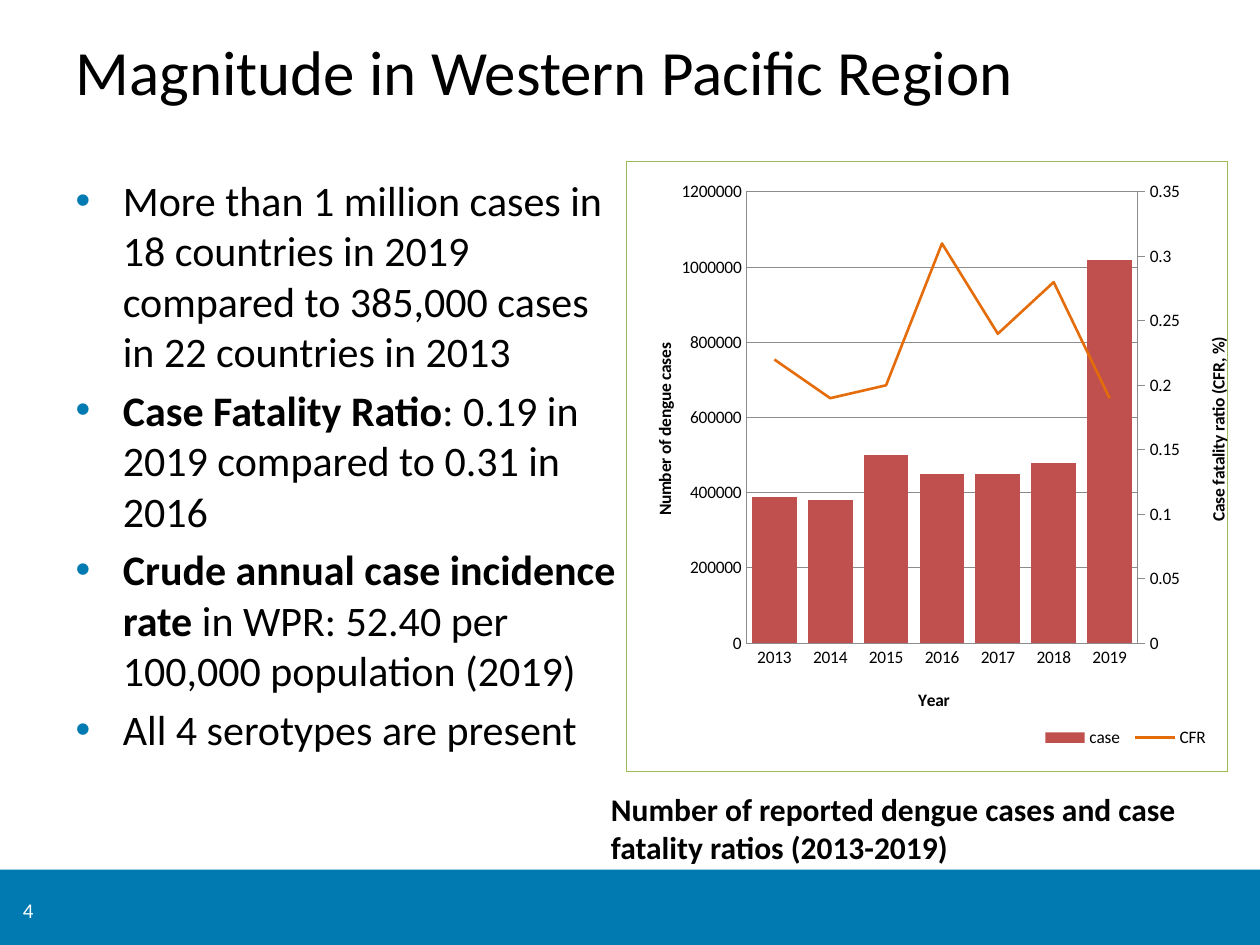
from copy import deepcopy
from dataclasses import dataclass

from pptx import Presentation
from pptx.chart.axis import CategoryAxis, ValueAxis
from pptx.chart.data import CategoryChartData
from pptx.dml.color import RGBColor
from pptx.enum.chart import XL_CHART_TYPE, XL_LEGEND_POSITION, XL_MARKER_STYLE, XL_TICK_MARK
from pptx.enum.shapes import MSO_SHAPE
from pptx.enum.text import MSO_ANCHOR, MSO_AUTO_SIZE, PP_ALIGN
from pptx.oxml import parse_xml
from pptx.oxml.ns import nsdecls, qn
from pptx.util import Pt


@dataclass(frozen=True)
class Theme:
    """Colours, font and type sizes of the slide."""
    font: str = "Calibri"
    ink: str = "000000"
    paper: str = "FFFFFF"
    accent: str = "007AB0"
    grid: str = "8C8C8C"
    frame: str = "9BBB59"
    cases: str = "C0504D"
    ratio: str = "E46C0A"
    title: int = 36
    body: int = 24
    caption: int = 18
    number: int = 12
    chart: int = 10


THEME = Theme()
BULLETS = [
    [("More than 1 million cases in 18 countries in 2019 compared to 385,000 cases "
      "in 22 countries in 2013", False)],
    [("Case Fatality Ratio", True), (": 0.19 in 2019 compared to 0.31 in 2016", False)],
    [("Crude annual case incidence rate ", True),
     ("in WPR: 52.40 per 100,000 population (2019)", False)],
    [("All 4 serotypes are present", False)],
]
YEARS = [str(year) for year in range(2013, 2020)]
CASES = [390000, 380000, 500000, 450000, 450000, 480000, 1020000]
RATIOS = [0.22, 0.19, 0.2, 0.31, 0.24, 0.28, 0.19]


def style_font(font, size, color=THEME.ink, bold=False):
    """Set the theme font with a size, colour and weight."""
    font.name, font.size, font.bold = THEME.font, Pt(size), bold
    font.color.rgb = RGBColor.from_string(color)


def style_line(line, color, width):
    """Set a solid line."""
    line.color.rgb = RGBColor.from_string(color)
    line.width = Pt(width)


def move(shape, box):
    """Place a shape in a box of left, top, width and height in points."""
    shape.left, shape.top, shape.width, shape.height = map(Pt, box)


def fill_frame(frame, text, size, color=THEME.ink, bold=False, anchor=MSO_ANCHOR.TOP):
    """Write one left-aligned paragraph into a wrapping text frame."""
    frame.word_wrap = True
    frame.auto_size = MSO_AUTO_SIZE.NONE
    frame.vertical_anchor = anchor
    para = frame.paragraphs[0]
    para.text = text
    para.alignment = PP_ALIGN.LEFT
    style_font(para.font, size, color, bold)


def add_title(page, box):
    """Fill the title placeholder."""
    title = page.shapes.title
    move(title, box)
    fill_frame(title.text_frame, "Magnitude in Western Pacific Region", THEME.title,
               anchor=MSO_ANCHOR.MIDDLE)


def add_bullets(page, box):
    """Fill the body placeholder with the bulleted list."""
    body = page.placeholders[1]
    move(body, box)
    frame = body.text_frame
    frame.word_wrap = True
    frame.auto_size = MSO_AUTO_SIZE.NONE
    for index, spans in enumerate(BULLETS):
        para = frame.add_paragraph() if index else frame.paragraphs[0]
        para.space_before = Pt(4.8 if index else 0)
        properties = para._p.get_or_add_pPr()
        properties.set("marL", str(Pt(27)))
        properties.set("indent", str(-Pt(27)))
        properties.append(parse_xml(
            f'<a:buClr {nsdecls("a")}><a:srgbClr val="{THEME.accent}"/></a:buClr>'))
        properties.append(parse_xml(f'<a:buChar {nsdecls("a")} char="•"/>'))
        style_font(para.font, THEME.body)
        for text, bold in spans:
            span = para.add_run()
            span.text = text
            span.font.bold = bold


def add_footer(page, box):
    """Draw the footer band with the page number."""
    left, top, width, height = box
    band = page.shapes.add_shape(MSO_SHAPE.RECTANGLE, *map(Pt, box))
    band.shadow.inherit = False
    band.fill.solid()
    band.fill.fore_color.rgb = RGBColor.from_string(THEME.accent)
    band.line.fill.background()
    number = page.shapes.add_textbox(*map(Pt, (left + 6, top + 7, 96, 32)))
    fill_frame(number.text_frame, "4", THEME.number, THEME.paper, anchor=MSO_ANCHOR.MIDDLE)


def add_caption(page, box):
    """Write the caption below the chart."""
    caption = page.shapes.add_textbox(*map(Pt, box))
    fill_frame(caption.text_frame,
               "Number of reported dengue cases and case fatality ratios (2013-2019)",
               THEME.caption, bold=True)


def set_layout(parent, position, target="", **fractions):
    """Give a chart part a manual layout in fractions of the chart."""
    for layout in parent.findall(qn("c:layout")):
        parent.remove(layout)
    inner = f'<c:layoutTarget val="{target}"/>' if target else ""
    modes = '<c:xMode val="edge"/><c:yMode val="edge"/>'
    values = "".join(f'<c:{key} val="{value}"/>' for key, value in fractions.items())
    parent.insert(position, parse_xml(
        f'<c:layout {nsdecls("c")}><c:manualLayout>{inner}{modes}{values}'
        "</c:manualLayout></c:layout>"))


def style_axis(axis, element, title, x, y, rotation, tick=XL_TICK_MARK.NONE):
    """Format an axis and place its title."""
    axis.major_tick_mark = tick
    axis.minor_tick_mark = XL_TICK_MARK.NONE
    style_line(axis.format.line, THEME.grid, 0.5)
    style_font(axis.tick_labels.font, THEME.chart)
    frame = axis.axis_title.text_frame
    frame.text = title
    style_font(frame.paragraphs[0].font, THEME.chart, bold=True)
    heading = element.find(qn("c:title"))
    for properties in heading.iter(qn("a:bodyPr")):
        properties.set("rot", str(rotation))
        properties.set("vert", "horz")
    set_layout(heading, 1, x=x, y=y)


def set_scale(axis, maximum, step):
    """Run an axis from zero to a maximum in equal steps."""
    axis.minimum_scale, axis.maximum_scale, axis.major_unit = 0, maximum, step


def add_ratio_plot(plot_area):
    """Move the second series to a line plot with its own axes; return the visible axes."""
    bars = plot_area.find(qn("c:barChart"))
    series = bars.findall(qn("c:ser"))[1]
    for flag in series.findall(qn("c:invertIfNegative")):
        series.remove(flag)
    lines = parse_xml(
        f'<c:lineChart {nsdecls("c")}><c:grouping val="standard"/><c:varyColors val="0"/>'
        '<c:marker val="1"/><c:axId val="5001"/><c:axId val="5002"/></c:lineChart>')
    lines.insert(2, series)
    bars.addnext(lines)
    years, cases = plot_area.find(qn("c:catAx")), plot_area.find(qn("c:valAx"))
    hidden, right = deepcopy(years), deepcopy(cases)
    for axis, own, other in ((hidden, "5001", "5002"), (right, "5002", "5001")):
        axis.find(qn("c:axId")).set("val", own)
        axis.find(qn("c:crossAx")).set("val", other)
    right.find(qn("c:axPos")).set("val", "r")
    right.find(qn("c:crosses")).set("val", "max")
    cases.addnext(right)
    right.addnext(hidden)
    CategoryAxis(hidden).visible = False
    return years, cases, right


def fill_xml(line=""):
    """Return shape properties with a paper fill and an optional line."""
    return parse_xml(f'<c:spPr {nsdecls("c", "a")}><a:solidFill><a:srgbClr val="{THEME.paper}"/>'
                     f"</a:solidFill>{line}</c:spPr>")


def add_dengue_chart(page, box):
    """Draw cases as columns and the fatality ratio as a line on the right axis."""
    data = CategoryChartData()
    data.categories = YEARS
    data.add_series("case", CASES)
    data.add_series("CFR", RATIOS)
    chart = page.shapes.add_chart(XL_CHART_TYPE.COLUMN_STACKED, *map(Pt, box), data).chart
    style_font(chart.font, THEME.chart)
    chart.has_title = False
    root = chart.element.find(qn("c:chart"))
    plot_area = root.find(qn("c:plotArea"))
    bottom, left, right = add_ratio_plot(plot_area)
    set_layout(plot_area, 0, "inner", x=0.2, y=0.05, w=0.65, h=0.74)

    columns, lines = chart.plots
    columns.gap_width, columns.overlap = 25, 50
    columns.vary_by_categories = False
    cases, ratio = columns.series[0], lines.series[0]
    cases.format.fill.solid()
    cases.format.fill.fore_color.rgb = RGBColor.from_string(THEME.cases)
    style_line(ratio.format.line, THEME.ratio, 1.5)
    ratio.smooth = False
    ratio.marker.style = XL_MARKER_STYLE.NONE

    left_axis, right_axis = ValueAxis(left), ValueAxis(right)
    style_axis(CategoryAxis(bottom), bottom, "Year", 0.48, 0.86, 0)
    style_axis(left_axis, left, "Number of dengue cases", 0.04, 0.29, -5400000)
    style_axis(right_axis, right, "Case fatality ratio (CFR, %)", 0.96, 0.28, -5400000,
               XL_TICK_MARK.OUTSIDE)
    set_scale(left_axis, 1200000, 200000)
    set_scale(right_axis, 0.35, 0.05)
    style_line(left_axis.major_gridlines.format.line, THEME.grid, 0.5)
    right_axis.has_major_gridlines = False

    chart.has_legend = True
    chart.legend.position = XL_LEGEND_POSITION.BOTTOM
    chart.legend.include_in_layout = False
    style_font(chart.legend.font, THEME.chart)
    set_layout(root.find(qn("c:legend")), 1, x=0.68, y=0.92, w=0.3, h=0.05)
    plot_area.append(fill_xml())
    root.addnext(fill_xml(f'<a:ln w="{Pt(0.5)}"><a:solidFill><a:srgbClr val="{THEME.frame}"/>'
                          "</a:solidFill></a:ln>"))


def main():
    """Build and save the deck."""
    deck = Presentation()
    deck.slide_width, deck.slide_height = Pt(720), Pt(540)
    page = deck.slides.add_slide(deck.slide_layouts[1])
    add_footer(page, (0, 497, 720, 43))
    add_title(page, (36, 12, 648, 56))
    add_bullets(page, (36, 96, 324, 380))
    add_dengue_chart(page, (357.5, 92, 347.5, 349))
    add_caption(page, (342, 448, 372, 51))
    deck.save("out.pptx")


if __name__ == "__main__":
    main()
